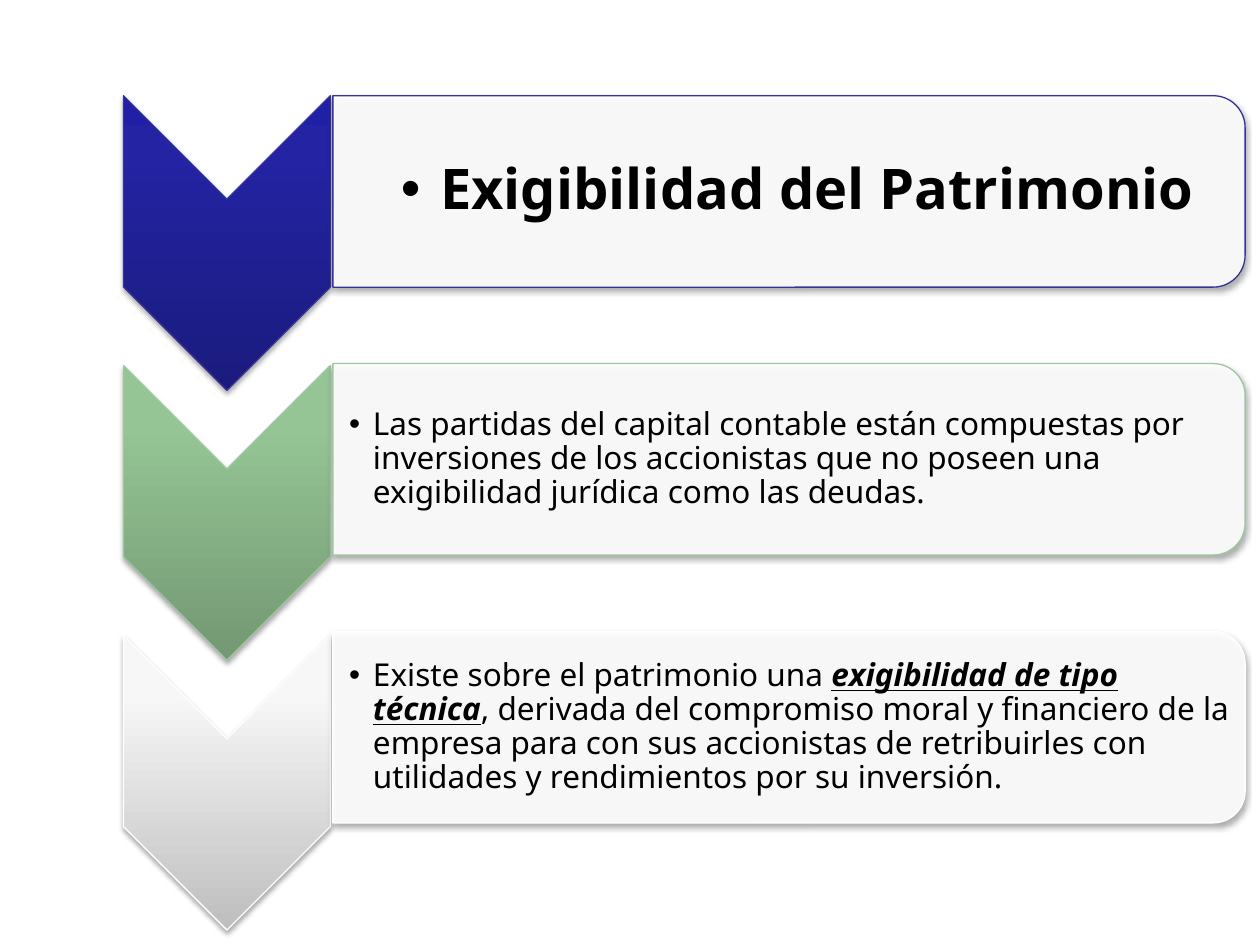
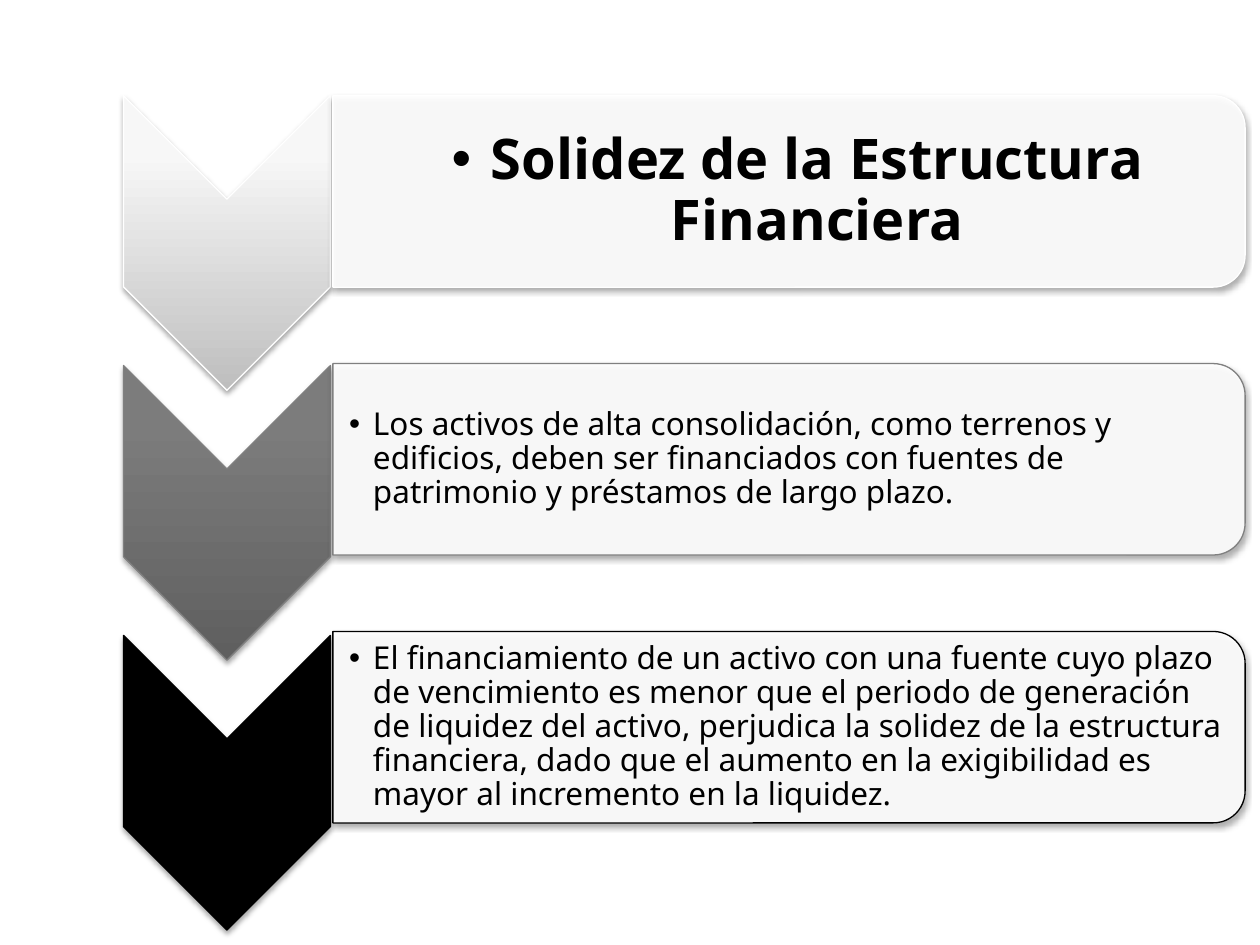
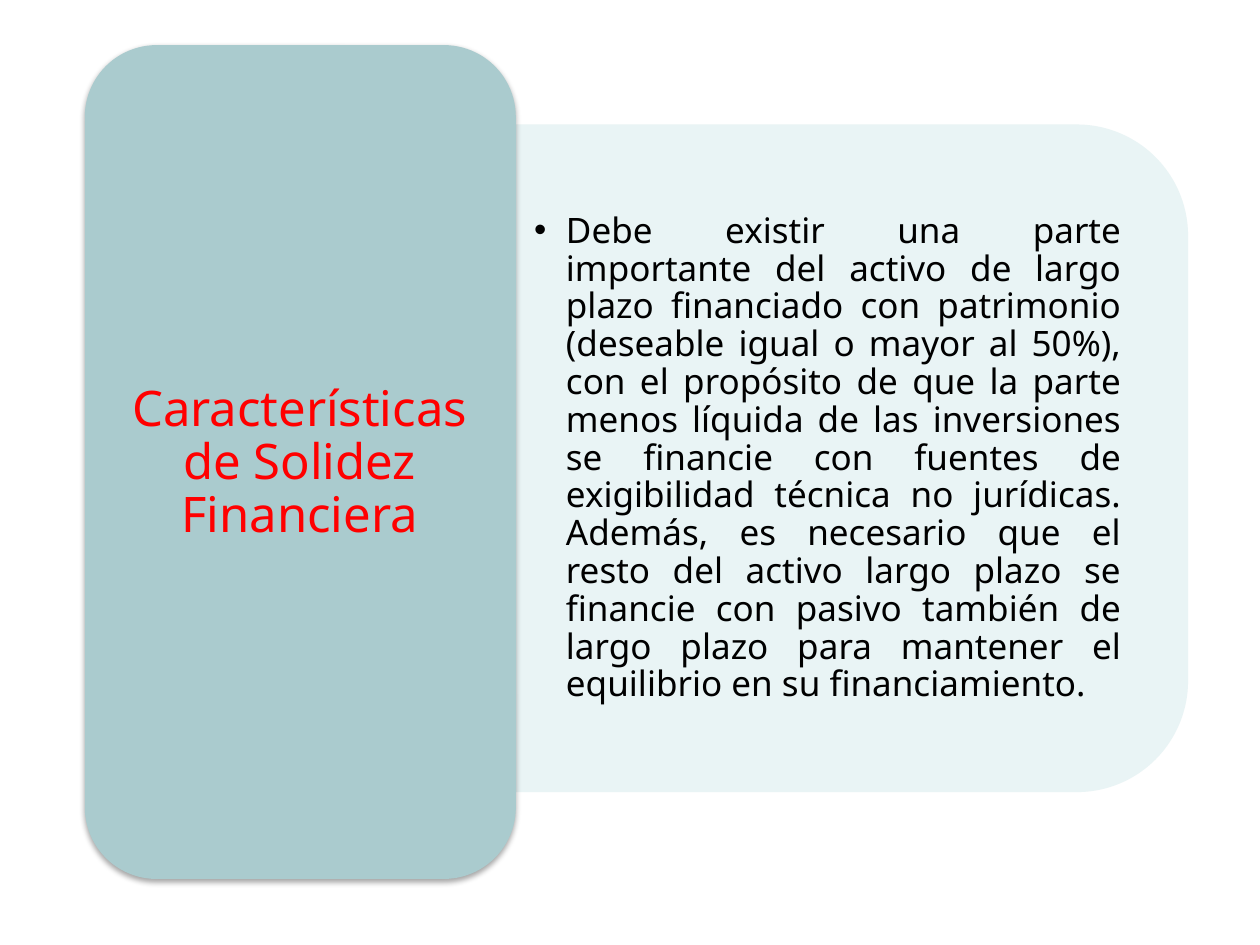
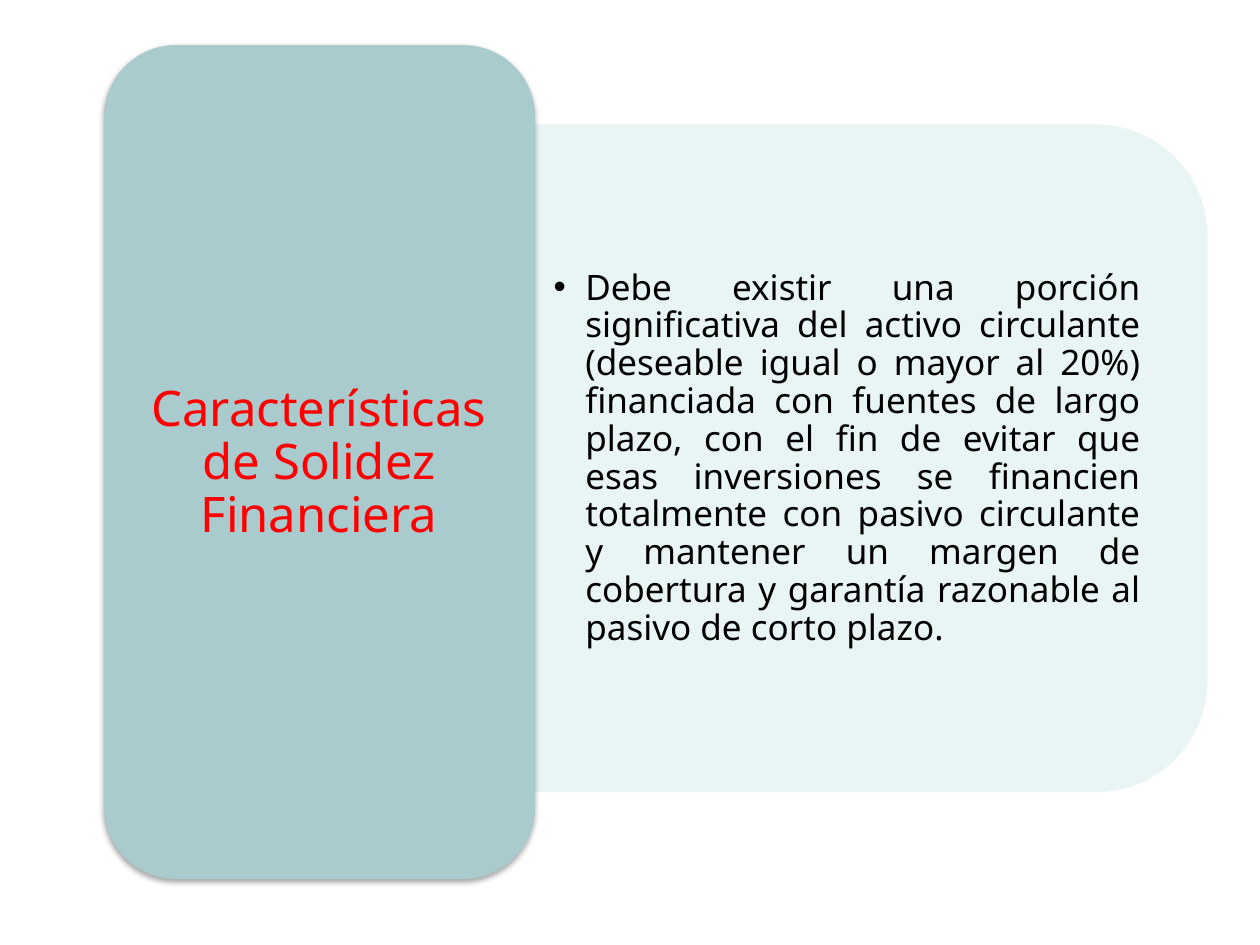
from lxml import etree
from pptx import Presentation
from pptx.dml.color import RGBColor
from pptx.enum.shapes import MSO_SHAPE as Preset
from pptx.enum.text import MSO_ANCHOR as Anchor, PP_ALIGN as Align
from pptx.oxml.ns import qn
from pptx.util import Cm, Pt

FONT = "Noto Sans"
BLACK, WHITE, RED = "000000", "FFFFFF", "FF0000"
PANEL, LABEL = "E7F3F4", "AACBCE"

# Chevron styles: outline and gradient stops from bottom to top
BLUE_STEP = ("333399", ("1B1B7E", "2323A3", "2020A6"))
GREEN_STEP = ("9FC69F", ("739873", "95C595", "95C795"))
WHITE_STEP = (WHITE, ("BEBEBE", "F7F7F7", "F8F8F8"))
GRAY_STEP = ("808080", ("5F5F5F", "7C7C7C", "7C7C7C"))
BLACK_STEP = (BLACK, (BLACK, BLACK, BLACK))
STOP_POSITIONS = (0, 80, 100)


def color(hex_string):
    return RGBColor.from_string(hex_string)


def add_element(parent, tag, **attributes):
    element = etree.SubElement(parent, qn(tag))
    for name, value in attributes.items():
        element.set(name, str(value))
    return element


def write_text(frame, text, size=18, font_color=BLACK, bold=False, align=Align.LEFT,
               bullet_indent=0, space_after=15):
    """Write one paragraph; text is a string or a list of (text, emphasized) runs."""
    paragraph = frame.paragraphs[0]
    properties = paragraph._p.get_or_add_pPr()
    after = add_element(properties, "a:spcAft")
    add_element(after, "a:spcPct", val=space_after * 1000)
    if bullet_indent:
        properties.set("marL", str(Cm(bullet_indent)))
        properties.set("indent", str(-Cm(bullet_indent)))
        add_element(properties, "a:buFont", typeface="Arial")
        add_element(properties, "a:buChar", char="•")
        paragraph.level = 1
    paragraph.alignment = align
    paragraph.line_spacing = 0.9
    for words, emphasized in [(text, False)] if isinstance(text, str) else text:
        run = paragraph.add_run()
        run.text = words
        font = run.font
        font.name, font.size, font.color.rgb = FONT, Pt(size), color(font_color)
        font.bold = bold or emphasized
        font.italic = font.underline = emphasized


class Deck:
    def __init__(self):
        self.presentation = Presentation()
        self.presentation.slide_width = Cm(25.4)
        self.presentation.slide_height = Cm(19.05)
        self.slide = None

    def new_slide(self):
        self.slide = self.presentation.slides.add_slide(self.presentation.slide_layouts[6])

    def shape(self, preset, left, top, width, height, line=None, shadow=True, turned=False):
        """Place a shape by its visible box; a turned one is rotated a quarter."""
        if turned:
            left, top = left + (width - height) / 2, top + (height - width) / 2
            width, height = height, width
        shape = self.slide.shapes.add_shape(preset, Cm(left), Cm(top), Cm(width), Cm(height))
        shape.rotation = 90 if turned else 0
        if line:
            shape.line.color.rgb = color(line)
            shape.line.width = Pt(0.75)
        else:
            shape.line.fill.background()
        shape.shadow.inherit = False
        if shadow:
            effects = shape._element.spPr.find(qn("a:effectLst"))
            outer = add_element(effects, "a:outerShdw", blurRad=Pt(3.1), dist=Pt(1.8),
                                dir=90 * 60000, rotWithShape=0)
            tint = add_element(outer, "a:srgbClr", val=BLACK)
            add_element(tint, "a:alpha", val=35000)
        return shape

    def fill(self, shape, fill_color, opacity=100):
        shape.fill.solid()
        shape.fill.fore_color.rgb = color(fill_color)
        if opacity < 100:
            tint = shape._element.spPr.find(qn("a:solidFill")).find(qn("a:srgbClr"))
            add_element(tint, "a:alpha", val=opacity * 1000)

    def gradient(self, shape, stops):
        shape.fill.gradient()
        gradient = shape._element.spPr.find(qn("a:gradFill"))
        gradient.set("rotWithShape", "0")
        for child in list(gradient):
            gradient.remove(child)
        stop_list = add_element(gradient, "a:gsLst")
        for position, stop_color in zip(STOP_POSITIONS, stops):
            stop = add_element(stop_list, "a:gs", pos=position * 1000)
            add_element(stop, "a:srgbClr", val=stop_color)
        add_element(gradient, "a:lin", ang=270 * 60000, scaled=0)

    def text(self, text, left, top, width, height, margins, **text_format):
        box = self.slide.shapes.add_textbox(Cm(left), Cm(top), Cm(width), Cm(height))
        frame = box.text_frame
        frame.word_wrap = True
        frame.vertical_anchor = Anchor.MIDDLE
        (frame.margin_left, frame.margin_top,
         frame.margin_right, frame.margin_bottom) = map(Cm, margins)
        write_text(frame, text, **text_format)

    def step(self, row, style, text):
        """A chevron with its panel; the first row is the heading."""
        line, stops = style
        chevron = self.shape(Preset.CHEVRON, 2.49, 1.93 + 5.44 * row, 4.17, 5.94,
                             line=line, turned=True)
        if len(set(stops)) == 1:
            self.fill(chevron, stops[0])
        else:
            self.gradient(chevron, stops)
        top = 1.93 + 5.4 * row
        panel = self.shape(Preset.ROUND_2_SAME_RECTANGLE, 6.71, top, 18.39, 3.86,
                           line=line, turned=True)
        self.fill(panel, WHITE, opacity=90)
        if row == 0:
            text_format = dict(margins=(0.64, 0.05, 0.05, 0.05), size=32, bold=True,
                               align=Align.CENTER, bullet_indent=0.79)
        else:
            text_format = dict(margins=(0.36, 0.03, 0.03, 0.03), bullet_indent=0.48)
        self.text(text, 6.68, top + 0.18, 18.21, 3.51, **text_format)

    def steps_slide(self, steps):
        self.new_slide()
        for row, (style, text) in enumerate(steps):
            self.step(row, style, text)

    def feature_slide(self, left, title, text):
        """A tall label at left, with the explanation beside it."""
        self.new_slide()
        panel = self.shape(Preset.ROUND_2_SAME_RECTANGLE, left + 8.37, 2.51, 13.87, 13.46,
                           shadow=False, turned=True)
        self.fill(panel, PANEL, opacity=90)
        self.text(text, left + 8.37, 3.18, 13.21, 12.14, margins=(0.69, 0.36, 0.69, 0.36),
                  size=20, align=Align.JUSTIFY, bullet_indent=0.64)
        label = self.shape(Preset.ROUNDED_RECTANGLE, left, 0.91, 8.69, 16.81)
        self.fill(label, LABEL)
        self.text(title, left + 0.42, 1.35, 7.82, 15.98, margins=(0.3, 0.15, 0.3, 0.15),
                  size=28, font_color=RED, align=Align.CENTER, space_after=35)


def main():
    deck = Deck()

    # Enforceability of equity
    deck.steps_slide([
        (BLUE_STEP, "Exigibilidad del Patrimonio"),
        (GREEN_STEP, "Las partidas del capital contable están compuestas por inversiones de "
                     "los accionistas que no poseen una exigibilidad jurídica como las deudas."),
        (WHITE_STEP, [
            ("Existe sobre el patrimonio una ", False),
            ("exigibilidad de tipo técnica", True),
            (", derivada del compromiso moral y financiero de la empresa para con sus "
             "accionistas de retribuirles con utilidades y rendimientos por su inversión.",
             False),
        ]),
    ])

    # Soundness of the financial structure
    deck.steps_slide([
        (WHITE_STEP, "Solidez de la Estructura Financiera"),
        (GRAY_STEP, "Los activos de alta consolidación, como terrenos y edificios, deben ser "
                    "financiados con fuentes de patrimonio y préstamos de largo plazo."),
        (BLACK_STEP, "El financiamiento de un activo con una fuente cuyo plazo de vencimiento "
                     "es menor que el periodo de generación de liquidez del activo, perjudica "
                     "la solidez de la estructura financiera, dado que el aumento en la "
                     "exigibilidad es mayor al incremento en la liquidez."),
    ])

    # Features of financial soundness
    title = "Características de Solidez Financiera"
    deck.feature_slide(
        1.71, title,
        "Debe existir una parte importante del activo de largo plazo financiado con patrimonio "
        "(deseable igual o mayor al 50%), con el propósito de que la parte menos líquida de las "
        "inversiones se financie con fuentes de exigibilidad técnica no jurídicas. Además, es "
        "necesario que el resto del activo largo plazo se financie con pasivo también de largo "
        "plazo para mantener el equilibrio en su financiamiento.")
    deck.feature_slide(
        2.1, title,
        "Debe existir una porción significativa del activo circulante (deseable igual o mayor "
        "al 20%) financiada con fuentes de largo plazo, con el fin de evitar que esas "
        "inversiones se financien totalmente con pasivo circulante y mantener un margen de "
        "cobertura y garantía razonable al pasivo de corto plazo.")

    deck.presentation.save("out.pptx")


if __name__ == "__main__":
    main()
